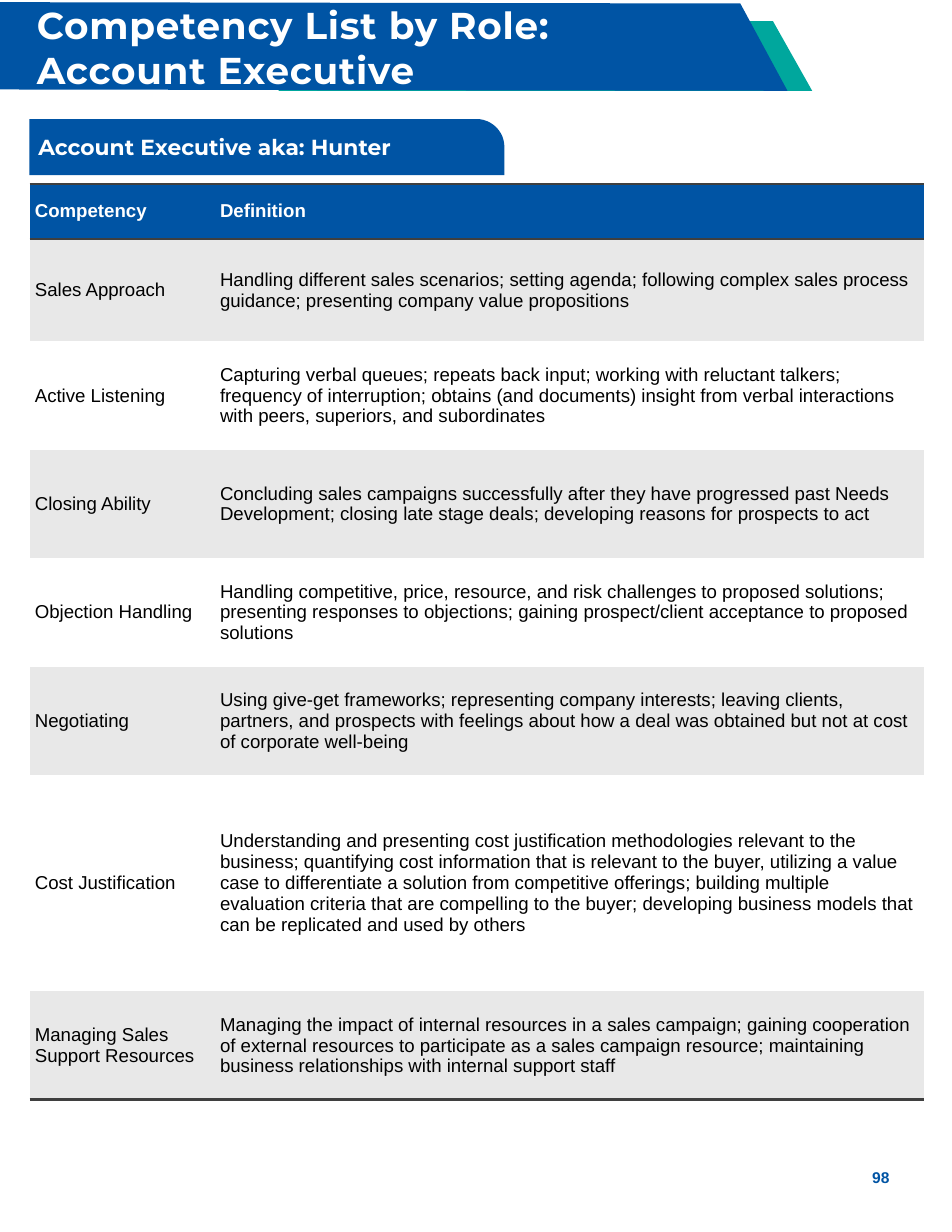
from copy import deepcopy
from typing import NamedTuple

from lxml import etree
from pptx import Presentation
from pptx.dml.color import RGBColor
from pptx.enum import shapes, text
from pptx.oxml.ns import qn
from pptx.util import Cm, Pt

BLUE = RGBColor(0x00, 0x54, 0xA4)
TEAL = RGBColor(0x00, 0xA7, 0x9D)
DARK = RGBColor(0x3F, 0x3F, 0x3F)
GRAY = RGBColor(0xE8, 0xE8, 0xE8)
WHITE = RGBColor(0xFF, 0xFF, 0xFF)
BLACK = RGBColor(0x00, 0x00, 0x00)
HEAD, BODY = "Montserrat", "Arial"
NO_STYLE = "{2D5ABB26-0587-4C30-8999-92F81FD0307C}"


class Band(NamedTuple):
    color: RGBColor
    points: list[tuple[float, float]]


class Skill(NamedTuple):
    name: str
    about: str
    height: float = 2.46


BANDS = [
    Band(TEAL, [(6.32, 0.53), (17.53, 0.48), (18.42, 2.06), (6.32, 2.06)]),
    Band(BLUE, [(0, 0.05), (16.79, 0.08), (17.86, 2.06), (0, 2.03)]),
]

ROWS = [
    Skill("Competency", "Definition", 1.25),
    Skill("Sales Approach",
          "Handling different sales scenarios; setting agenda; following complex "
          "sales process guidance; presenting company value propositions", 2.32),
    Skill("Active Listening",
          "Capturing verbal queues; repeats back input; working with reluctant "
          "talkers; frequency of interruption; obtains (and documents) insight from "
          "verbal interactions with peers, superiors, and subordinates"),
    Skill("Closing Ability",
          "Concluding sales campaigns successfully after they have progressed past "
          "Needs Development; closing late stage deals; developing reasons for "
          "prospects to act"),
    Skill("Objection Handling",
          "Handling competitive, price, resource, and risk challenges to proposed "
          "solutions; presenting responses to objections; gaining prospect/client "
          "acceptance to proposed solutions"),
    Skill("Negotiating",
          "Using give-get frameworks; representing company interests; leaving "
          "clients, partners, and prospects with feelings about how a deal was "
          "obtained but not at cost of corporate well-being"),
    Skill("Cost Justification",
          "Understanding and presenting cost justification methodologies relevant "
          "to the business; quantifying cost information that is relevant to the "
          "buyer, utilizing a value case to differentiate a solution from "
          "competitive offerings; building multiple evaluation criteria that are "
          "compelling to the buyer; developing business models that can be "
          "replicated and used by others", 4.9),
    Skill("Managing Sales Support Resources",
          "Managing the impact of internal resources in a sales campaign; gaining "
          "cooperation of external resources to participate as a sales campaign "
          "resource; maintaining business relationships with internal support staff"),
]


def write(frame, words: str, *, size=12, face=BODY, color=BLACK, bold=False,
          align=text.PP_ALIGN.LEFT, track=0) -> None:
    """Put one formatted paragraph into a text frame."""
    para = frame.paragraphs[0]
    para.text = words
    para.alignment = align
    for run in para.runs:
        font = run.font
        font.size, font.name, font.bold = Pt(size), face, bold
        font.color.rgb = color
        if track:
            font._element.set("spc", str(track))
    for gap in para._p.findall(qn("a:br")):
        gap.append(deepcopy(para.runs[0].font._element))


def inset(item, size: float) -> None:
    """Give a cell or text frame equal margins."""
    item.margin_left = item.margin_right = Cm(size)
    item.margin_top = item.margin_bottom = Cm(size)


def paint(shape, color: RGBColor) -> None:
    """Fill a shape flat, with no outline or shadow."""
    shape.shadow.inherit = False
    shape.fill.solid()
    shape.fill.fore_color.rgb = color
    shape.line.fill.background()


def draw_band(slide, band: Band) -> None:
    first, *rest = [(x * 100, y * 100) for x, y in band.points]
    pen = slide.shapes.build_freeform(*first, scale=Cm(1) / 100)
    pen.add_line_segments(rest, close=True)
    paint(pen.convert_to_shape(), band.color)


def rule(cell, side: str) -> None:
    """Draw a dark border on one side of a cell."""
    line = etree.SubElement(cell._tc.get_or_add_tcPr(), qn(f"a:{side}"), w=str(Pt(2)))
    fill = etree.SubElement(line, qn("a:solidFill"))
    etree.SubElement(fill, qn("a:srgbClr"), val=str(DARK))


def draw_table(slide, rows: list[Skill]) -> None:
    high = sum(row.height for row in rows)
    grid = slide.shapes.add_table(len(rows), 2, Cm(0.67), Cm(4.17),
                                  Cm(20.28), Cm(high)).table
    grid._tbl.tblPr.find(qn("a:tableStyleId")).text = NO_STYLE
    grid.columns[0].width, grid.columns[1].width = Cm(4.2), Cm(16.08)
    for i, row in enumerate(rows):
        grid.rows[i].height = Cm(row.height)
        top = i == 0
        back = BLUE if top else GRAY if i % 2 else WHITE
        for cell, words in zip(grid.rows[i].cells, (row.name, row.about)):
            inset(cell, 0.12)
            cell.vertical_anchor = text.MSO_ANCHOR.MIDDLE
            if top:
                rule(cell, "lnT")
            if top or i == len(rows) - 1:
                rule(cell, "lnB")
            cell.fill.solid()
            cell.fill.fore_color.rgb = back
            write(cell.text_frame, words, color=WHITE if top else BLACK, bold=top)


def main() -> None:
    deck = Presentation()
    deck.slide_width, deck.slide_height = Cm(21.59), Cm(27.94)
    slide = deck.slides.add_slide(deck.slide_layouts[5])

    # Banner, with the title in front
    for band in BANDS:
        draw_band(slide, band)
    title = slide.shapes.title
    slide.shapes._spTree.append(title._element)
    title.left, title.top = Cm(0.58), Cm(0.46)
    title.width, title.height = Cm(15.49), Cm(1.22)
    frame = title.text_frame
    frame.auto_size = text.MSO_AUTO_SIZE.NONE
    frame.vertical_anchor = text.MSO_ANCHOR.MIDDLE
    write(frame, "Competency List by Role:\vAccount Executive", size=24,
          face=HEAD, color=WHITE, bold=True, track=50)

    # Competency table
    draw_table(slide, ROWS)

    # Role label
    label = slide.shapes.add_shape(shapes.MSO_SHAPE.ROUND_1_RECTANGLE,
                                   Cm(0.67), Cm(2.7), Cm(10.77), Cm(1.27))
    label.adjustments[0] = 0.5
    paint(label, BLUE)
    inset(label.text_frame, 0.2)
    label.text_frame.vertical_anchor = text.MSO_ANCHOR.MIDDLE
    write(label.text_frame, "Account Executive aka: Hunter", size=14,
          face=HEAD, color=WHITE, bold=True)

    # Page number
    page = slide.shapes.add_textbox(Cm(19.2), Cm(26.37), Cm(1.55), Cm(0.7))
    page.text_frame.word_wrap = True
    write(page.text_frame, "98", size=10, color=BLUE, bold=True,
          align=text.PP_ALIGN.CENTER)

    deck.save("out.pptx")


if __name__ == "__main__":
    main()
